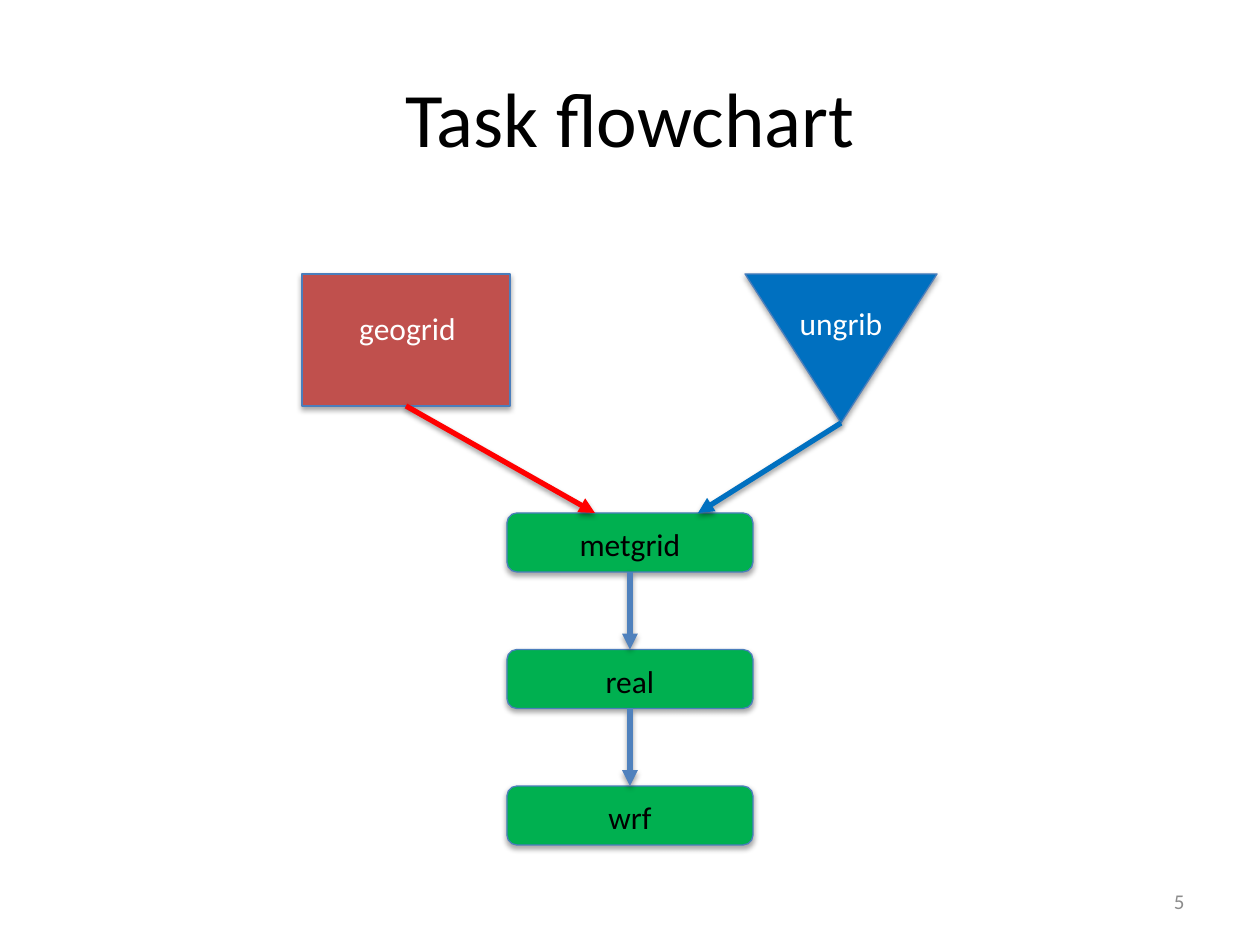
from dataclasses import dataclass

from lxml import etree
from pptx import Presentation
from pptx.dml.color import RGBColor
from pptx.enum.shapes import MSO_CONNECTOR, MSO_SHAPE
from pptx.enum.text import MSO_ANCHOR, PP_ALIGN
from pptx.oxml import parse_xml
from pptx.oxml.ns import nsdecls, qn
from pptx.util import Emu, Pt

RECTANGLE = MSO_SHAPE.RECTANGLE
TRIANGLE = MSO_SHAPE.ISOSCELES_TRIANGLE
ROUNDED = MSO_SHAPE.ROUNDED_RECTANGLE
STRAIGHT = MSO_CONNECTOR.STRAIGHT
TOP, MIDDLE = MSO_ANCHOR.TOP, MSO_ANCHOR.MIDDLE
LEFT, CENTER, RIGHT = PP_ALIGN.LEFT, PP_ALIGN.CENTER, PP_ALIGN.RIGHT
TOP_SIDE, BOTTOM_SIDE = 0, 2
EMU_PER_PX = 914400 / 126


@dataclass(frozen=True)
class Theme:
    font: str = "Calibri"
    title_size: int = 44
    label_size: int = 18
    number_size: int = 12
    black: str = "000000"
    white: str = "FFFFFF"
    gray: str = "8C8C8C"
    outline: str = "4B7EBC"
    geogrid: str = "C0504D"
    ungrib: str = "0070C0"
    stage: str = "00B050"
    geogrid_arrow: str = "FF0000"
    stage_arrow: str = "4F81BD"


THEME = Theme()


def px(length):
    return Emu(round(length * EMU_PER_PX))


def add_shadow(shape, distance, opacity):
    properties = shape._element.spPr
    for old in properties.findall(qn("a:effectLst")):
        properties.remove(old)
    properties.append(parse_xml(
        f'<a:effectLst {nsdecls("a")}><a:outerShdw blurRad="40000" dist="{distance}" '
        f'dir="5400000" rotWithShape="0"><a:srgbClr val="{THEME.black}">'
        f'<a:alpha val="{opacity}"/></a:srgbClr></a:outerShdw></a:effectLst>'))


def add_text(slide, box, text, size, color, align=LEFT, anchor=TOP, wrap=True):
    text_box = slide.shapes.add_textbox(*map(px, box))
    frame = text_box.text_frame
    frame.word_wrap = wrap
    frame.vertical_anchor = anchor
    paragraph = frame.paragraphs[0]
    paragraph.alignment = align
    run = paragraph.add_run()
    run.text = text
    run.font.name = THEME.font
    run.font.size = Pt(size)
    run.font.color.rgb = RGBColor.from_string(color)


def add_node(slide, kind, box, fill, text, text_color, label_box, rotation=0):
    """Draw a shape, with its label in a box relative to the shape's corner."""
    left, top = box[:2]
    shape = slide.shapes.add_shape(kind, *map(px, box))
    shape.rotation = rotation
    shape.fill.solid()
    shape.fill.fore_color.rgb = RGBColor.from_string(fill)
    shape.line.color.rgb = RGBColor.from_string(THEME.outline)
    shape.line.width = Pt(0.75)
    add_shadow(shape, 23000, 35000)
    label_left, label_top, width, height = label_box
    add_text(slide, (left + label_left, top + label_top, width, height),
             text, THEME.label_size, text_color, CENTER, wrap=False)
    return shape


def add_arrow(slide, start, end, color):
    arrow = slide.shapes.add_connector(STRAIGHT, *map(px, start + end))
    arrow.line.color.rgb = RGBColor.from_string(color)
    arrow.line.width = Pt(3)
    etree.SubElement(arrow.line._get_or_add_ln(), qn("a:tailEnd"), type="triangle")
    add_shadow(arrow, 20000, 38000)
    return arrow


def add_inputs(slide, box):
    """Place the two input tasks at the left and right of the box."""
    left, top, width, height = box
    geogrid = add_node(slide, RECTANGLE, (left, top, 208, 132), THEME.geogrid,
                       "geogrid", THEME.white, (44, 29, 123, 50))
    add_node(slide, TRIANGLE, (left + width - 192, top, 192, height), THEME.ungrib,
             "ungrib", THEME.white, (41, 24, 110, 50), rotation=180)
    return geogrid


def add_stages(slide, box, names):
    """Stack the stages evenly down the box and join each to the next."""
    left, top, width, height = box
    stage_height = 59
    pitch = (height - stage_height) / (len(names) - 1)
    stages = [
        add_node(slide, ROUNDED, (left, top + index * pitch, width, stage_height),
                 THEME.stage, name, THEME.black, (0, 6, width, 50))
        for index, name in enumerate(names)
    ]
    for upper, lower in zip(stages, stages[1:]):
        arrow = add_arrow(slide, (left, top), (left, top), THEME.stage_arrow)
        arrow.begin_connect(upper, BOTTOM_SIDE)
        arrow.end_connect(lower, TOP_SIDE)


def add_flowchart(slide, box):
    left, top, width, height = box
    geogrid = add_inputs(slide, (left, top, width, 149))
    stages_top = top + 239
    add_stages(slide, (left + 205, stages_top, 246, height - 239),
               ["metgrid", "real", "wrf"])

    # Arrows from the inputs to the first stage
    from_geogrid = add_arrow(slide, (left + 104, top + 132),
                             (left + 293, stages_top), THEME.geogrid_arrow)
    from_geogrid.begin_connect(geogrid, BOTTOM_SIDE)
    add_arrow(slide, (left + width - 96, top + 149),
              (left + 396, stages_top), THEME.ungrib)


def main():
    presentation = Presentation()
    presentation.slide_width = px(1260)
    presentation.slide_height = px(945)
    slide = presentation.slides.add_slide(presentation.slide_layouts[6])

    # Title
    add_text(slide, (63, 38, 1134, 157), "Task flowchart",
             THEME.title_size, THEME.black, CENTER, MIDDLE)

    add_flowchart(slide, (302, 274, 635, 571))

    # Slide number
    add_text(slide, (903, 876, 294, 50), "5",
             THEME.number_size, THEME.gray, RIGHT, MIDDLE)

    presentation.save("out.pptx")


if __name__ == "__main__":
    main()
